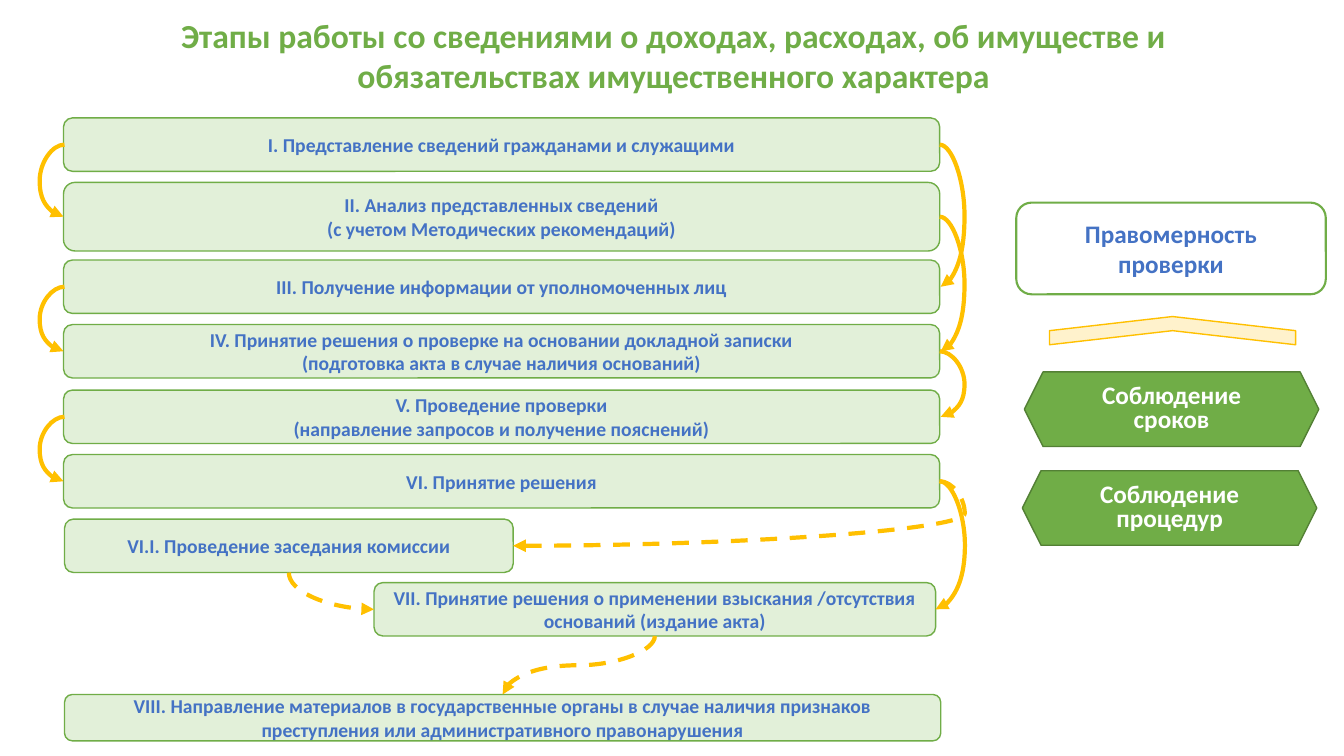
from lxml import etree
from pptx import Presentation
from pptx.dml.color import RGBColor
from pptx.enum import dml, shapes, text
from pptx.oxml.ns import qn
from pptx.util import Inches, Pt

COLORS = {"green": "70AD47", "dark_green": "538035", "pale_green": "E2F0D9",
          "blue": "4472C4", "gold": "FFC000", "pale_gold": "FFF2CC", "white": "FFFFFF"}

TITLE = ("Этапы работы со сведениями о доходах, расходах, об имуществе и "
         "обязательствах имущественного характера")

# stage: (left, top, width, height, paragraphs)
STAGES = {
    "I": (0.63, 1.17, 8.69, 0.53, ["I. Представление сведений гражданами и служащими"]),
    "II": (0.63, 1.81, 8.69, 0.68, ["II. Анализ представленных сведений",
                                    "(с учетом Методических рекомендаций)"]),
    "III": (0.63, 2.58, 8.69, 0.53, ["III. Получение информации от уполномоченных лиц"]),
    "IV": (0.63, 3.22, 8.69, 0.53,
           ["IV. Принятие решения о проверке на основании докладной записки",
            "(подготовка акта в случае наличия оснований)"]),
    "V": (0.63, 3.87, 8.69, 0.53, ["V. Проведение проверки",
                                   "(направление запросов и получение пояснений)"]),
    "VI": (0.63, 4.51, 8.69, 0.53, ["VI. Принятие решения"]),
    "VI.I": (0.64, 5.15, 4.45, 0.53, ["VI.I. Проведение заседания комиссии"]),
    "VII": (3.71, 5.78, 5.57, 0.53,
            ["VII. Принятие решения о применении взыскания /отсутствия "
             "оснований (издание акта)"]),
    "VIII": (0.64, 6.89, 8.69, 0.46,
             ["VIII. Направление материалов в государственные органы в случае наличия "
              "признаков преступления или административного правонарушения"]),
}
LEFT_LOOPS = [("I", "II"), ("III", "IV"), ("V", "VI")]
# (from, to, dashed)
RIGHT_LOOPS = [("I", "III", False), ("II", "IV", False), ("IV", "V", False),
               ("VI", "VII", False), ("VI", "VI.I", True)]
LEFT_BEND, RIGHT_BEND, OFFSET = 0.39, 9.57, 0.01

LAWFULNESS = (10.08, 2.01, 3.07, 0.91, ["Правомерность проверки"])
CONDITIONS = [(10.16, 3.69, 2.92, 0.74, ["Соблюдение сроков"]),
              (10.14, 4.67, 2.92, 0.74, ["Соблюдение процедур"])]
ROOF = (11.49, 2.06, 0.28, 2.44)

prs = Presentation()
prs.slide_width, prs.slide_height = Inches(13.33), Inches(7.5)
slide = prs.slides.add_slide(prs.slide_layouts[6])


def rgb(name):
    return RGBColor.from_string(COLORS[name])


def write(frame, paragraphs, size, color, anchor=text.MSO_ANCHOR.MIDDLE, spacing=None):
    frame.word_wrap = True
    frame.vertical_anchor = anchor
    for i, line in enumerate(paragraphs):
        paragraph = frame.paragraphs[0] if i == 0 else frame.add_paragraph()
        paragraph.alignment = text.PP_ALIGN.CENTER
        if spacing:
            paragraph.line_spacing = spacing
        run = paragraph.add_run()
        run.text = line
        run.font.name, run.font.size, run.font.bold = "Calibri", Pt(size), True
        run.font.color.rgb = rgb(color)


def add_block(kind, place, fill, line, width=1):
    block = slide.shapes.add_shape(kind, *map(Inches, place))
    block.shadow.inherit = False
    block.fill.solid()
    block.fill.fore_color.rgb = rgb(fill)
    block.line.color.rgb = rgb(line)
    block.line.width = Pt(width)
    return block


def add_arrow(start, end, preset="curvedConnector3", bend=None, dashed=False, downward=False):
    """Curved arrow; bend is its turning share, downward makes it leave vertically."""
    (x1, y1), (x2, y2) = start, end
    if downward:  # lay the box on its side, then turn it by 90 degrees
        cx, cy, dx, dy = (x1 + x2) / 2, (y1 + y2) / 2, x2 - x1, y2 - y1
        x1, y1, x2, y2 = cx - dy / 2, cy + dx / 2, cx + dy / 2, cy - dx / 2
    arrow = slide.shapes.add_connector(shapes.MSO_CONNECTOR.CURVE,
                                       *map(Inches, (x1, y1, x2, y2)))
    arrow.line.color.rgb = rgb("gold")
    arrow.line.width = Pt(3)
    if dashed:
        arrow.line.dash_style = dml.MSO_LINE.DASH
    properties = arrow._element.spPr
    if downward:
        properties.find(qn("a:xfrm")).set("rot", "5400000")
    geometry = properties.find(qn("a:prstGeom"))
    geometry.set("prst", preset)
    if bend is not None:
        guides = geometry.find(qn("a:avLst"))
        if guides is None:
            guides = etree.SubElement(geometry, qn("a:avLst"))
        etree.SubElement(guides, qn("a:gd"), name="adj1", fmla=f"val {round(bend * 100000)}")
    etree.SubElement(properties.find(qn("a:ln")), qn("a:tailEnd"), type="triangle")
    etree.SubElement(properties, qn("a:effectLst"))


def side(stage, name):
    left, top, width, height, _ = STAGES[stage]
    return {"left": (left, top + height / 2), "right": (left + width, top + height / 2),
            "top": (left + width / 2, top), "bottom": (left + width / 2, top + height)}[name]


def add_loop(source, target, edge, bend_x, dashed=False):
    """Side arrow that bulges out to bend_x."""
    (x1, y1), (x2, y2) = side(source, edge), side(target, edge)
    if abs(x1 - x2) < OFFSET:
        if edge == "left":
            x1 += OFFSET
        else:
            x2 += OFFSET
    add_arrow((x1, y1), (x2, y2), bend=(bend_x - x1) / (x2 - x1), dashed=dashed)


heading = slide.shapes.add_textbox(*map(Inches, (0.63, 0.1, 12.1, 0.91)))
write(heading.text_frame, [TITLE], 24, "green", anchor=text.MSO_ANCHOR.TOP)

for *place, lines in STAGES.values():
    stage_box = add_block(shapes.MSO_SHAPE.ROUNDED_RECTANGLE, place, "pale_green", "green")
    write(stage_box.text_frame, lines, 14, "blue")

for source, target in LEFT_LOOPS:
    add_loop(source, target, "left", LEFT_BEND)
for source, target, dashed in RIGHT_LOOPS:
    add_loop(source, target, "right", RIGHT_BEND, dashed)
add_arrow(side("VI.I", "bottom"), side("VII", "left"), "curvedConnector2",
          dashed=True, downward=True)
add_arrow(side("VII", "bottom"), side("VIII", "top"), bend=0.5, dashed=True, downward=True)

for *place, lines in CONDITIONS:
    condition = add_block(shapes.MSO_SHAPE.HEXAGON, place, "green", "dark_green")
    write(condition.text_frame, lines, 18, "white", spacing=0.8)

roof = add_block(shapes.MSO_SHAPE.CHEVRON, ROOF, "pale_gold", "gold")
roof.rotation = 270

*place, lines = LAWFULNESS
lawfulness = add_block(shapes.MSO_SHAPE.ROUNDED_RECTANGLE, place, "white", "green", 1.5)
write(lawfulness.text_frame, lines, 18, "blue")

prs.save("out.pptx")
